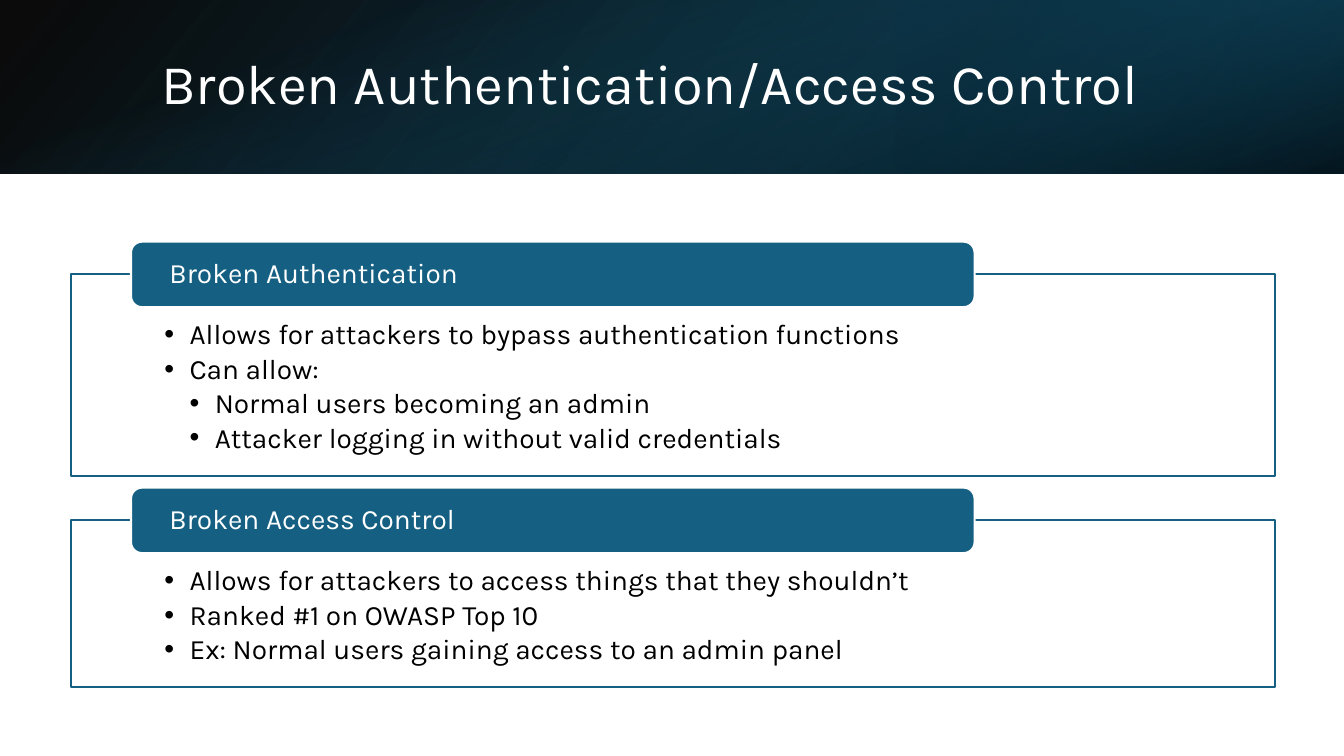
from lxml.etree import SubElement
from pptx import Presentation
from pptx.dml.color import RGBColor
from pptx.enum.shapes import MSO_SHAPE
from pptx.enum.text import MSO_ANCHOR, PP_ALIGN
from pptx.oxml.ns import qn
from pptx.util import Pt

FONT = "Karla"
BLUE, WHITE, BLACK = "156082", "FFFFFF", "000000"
SLIDE_W, SLIDE_H, BAND_H = 960, 540, 124
INDENT = 18
HEADER_H = 46.8
CARD_GAP = 31.7

# Card header, then bullets as (level, text)
CARDS = [
    ("Broken Authentication", 144, [
        (1, "Allows for attackers to bypass authentication functions"),
        (1, "Can allow:"),
        (2, "Normal users becoming an admin"),
        (2, "Attacker logging in without valid credentials"),
    ]),
    ("Broken Access Control", 118.8, [
        (1, "Allows for attackers to access things that they shouldn’t"),
        (1, "Ranked #1 on OWASP Top 10"),
        (1, "Ex: Normal users gaining access to an admin panel"),
    ]),
]


def color(hex_str):
    return RGBColor.from_string(hex_str)


def add_box(slide, kind, x, y, w, h, fill=None, line=None):
    sp = slide.shapes.add_shape(kind, Pt(x), Pt(y), Pt(w), Pt(h))
    sp.shadow.inherit = False
    if fill:
        sp.fill.solid()
        sp.fill.fore_color.rgb = color(fill)
    if line:
        sp.line.color.rgb = color(line)
        sp.line.width = Pt(1.5)
    else:
        sp.line.fill.background()
    return sp


def add_gradient(slide, x, y, w, h, stops, angle, rotation=0, flip=False):
    """Stops are (position %, colour, opacity %)."""
    sp = add_box(slide, MSO_SHAPE.RECTANGLE, x, y, w, h)
    sp.rotation = rotation
    sp_pr = sp.element.spPr
    if flip:
        sp_pr.find(qn("a:xfrm")).set("flipH", "1")
    grad = SubElement(sp_pr, qn("a:gradFill"), rotWithShape="1")
    sp_pr.find(qn("a:prstGeom")).addnext(grad)
    gs_lst = SubElement(grad, qn("a:gsLst"))
    for pos, hex_str, opacity in stops:
        gs = SubElement(gs_lst, qn("a:gs"), pos=str(pos * 1000))
        clr = SubElement(gs, qn("a:srgbClr"), val=hex_str)
        SubElement(clr, qn("a:alpha"), val=str(opacity * 1000))
    SubElement(grad, qn("a:lin"), ang=str(angle * 60000), scaled="0")


def set_frame(sp, anchor, left, top, right, bottom):
    tf = sp.text_frame
    tf.word_wrap = True
    tf.vertical_anchor = anchor
    tf.margin_left, tf.margin_top = Pt(left), Pt(top)
    tf.margin_right, tf.margin_bottom = Pt(right), Pt(bottom)
    return tf


def add_text(tf, text, size=20, fill=BLACK, after=0, level=0):
    p = tf.add_paragraph() if tf.text else tf.paragraphs[0]
    p.alignment = PP_ALIGN.LEFT
    p.line_spacing = 0.9
    p.space_after = Pt(after)
    if level:
        p_pr = p._p.get_or_add_pPr()
        p_pr.set("marL", str(Pt(INDENT * level)))
        p_pr.set("indent", str(-Pt(INDENT)))
        SubElement(p_pr, qn("a:buFont"), typeface="Arial")
        SubElement(p_pr, qn("a:buChar"), char="•")
    r = p.add_run()
    r.text = text
    r.font.name = FONT
    r.font.size = Pt(size)
    r.font.color.rgb = color(fill)


def add_band(slide):
    add_gradient(slide, 0, 0, SLIDE_W, BAND_H,
                 [(0, BLACK, 96), (100, "104862", 100)], 140, flip=True)
    add_gradient(slide, 640, 0, 320, BAND_H,
                 [(19, "0B3041", 68), (100, BLUE, 79)], 320, rotation=180, flip=True)
    # Upright strip turned on its side to cover the band
    shift = (SLIDE_W - BAND_H) / 2
    add_gradient(slide, shift, -shift, BAND_H, SLIDE_W,
                 [(23, BLUE, 0), (99, BLACK, 74)], 340, rotation=90)


def add_title(slide, text):
    sp = slide.shapes.add_textbox(Pt(108), Pt(27.4), Pt(898 - 108), Pt(69))
    tf = set_frame(sp, MSO_ANCHOR.MIDDLE, 7.2, 3.6, 7.2, 3.6)
    add_text(tf, text, size=40, fill=WHITE)


def add_card(slide, y, header, height, bullets):
    frame = add_box(slide, MSO_SHAPE.RECTANGLE, 50.4, y, 860.4, height, WHITE, BLUE)
    tf = set_frame(frame, MSO_ANCHOR.TOP, 67, 33, 67, 11.5)
    for level, text in bullets:
        add_text(tf, text, after=3, level=level)

    # Header straddles the top edge of the frame
    tab = add_box(slide, MSO_SHAPE.ROUNDED_RECTANGLE, 93.6, y - HEADER_H / 2,
                  602.6, HEADER_H, BLUE, WHITE)
    tf = set_frame(tab, MSO_ANCHOR.MIDDLE, 25.2, 0, 25.2, 0)
    add_text(tf, header, fill=WHITE)


def main():
    prs = Presentation()
    prs.slide_width, prs.slide_height = Pt(SLIDE_W), Pt(SLIDE_H)
    slide = prs.slides.add_slide(prs.slide_layouts[6])

    add_band(slide)
    add_title(slide, "Broken Authentication/Access Control")

    y = 196
    for header, height, bullets in CARDS:
        add_card(slide, y, header, height, bullets)
        y += height + CARD_GAP

    prs.save("out.pptx")


if __name__ == "__main__":
    main()
